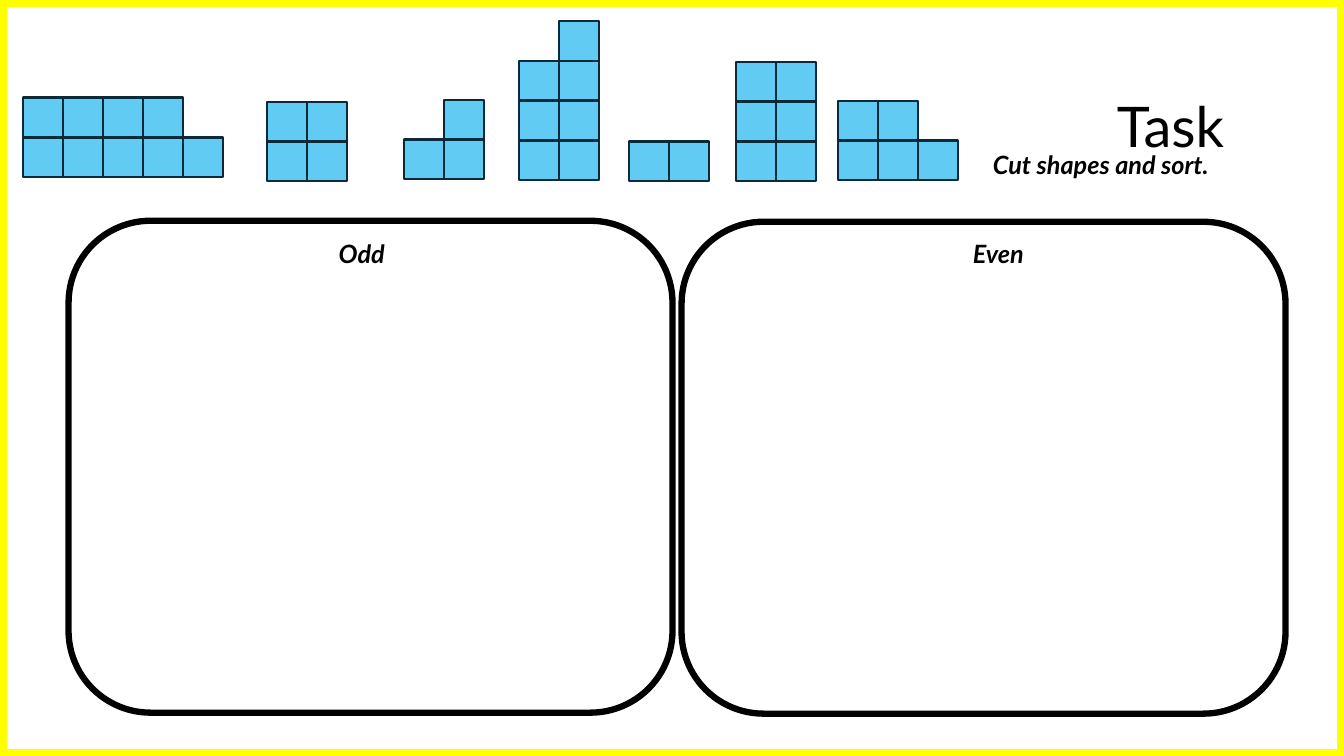
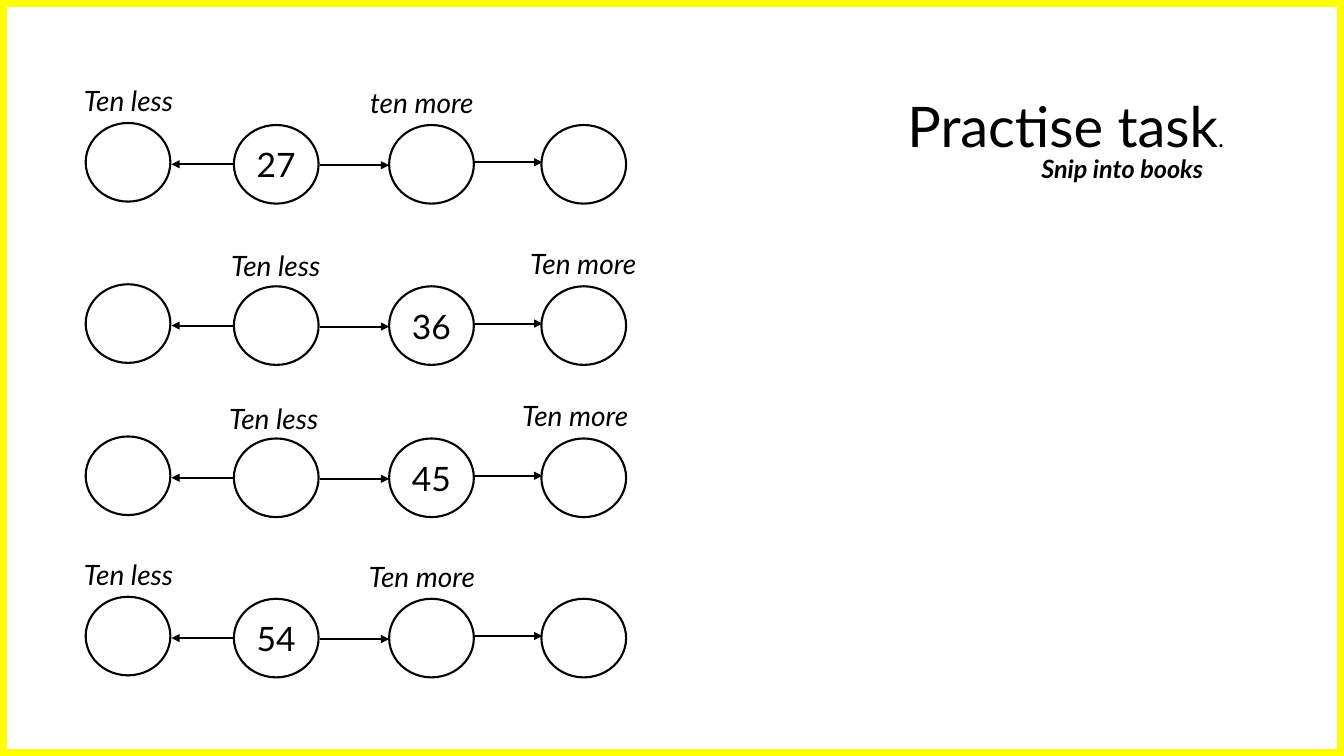
from dataclasses import dataclass

from lxml.etree import SubElement
from pptx import Presentation
from pptx.dml.color import RGBColor
from pptx.enum.shapes import MSO_CONNECTOR as Connector, MSO_SHAPE as Shape
from pptx.enum.text import MSO_ANCHOR as Anchor, MSO_AUTO_SIZE as AutoSize, PP_ALIGN as Align
from pptx.oxml.ns import qn
from pptx.util import Inches, Pt


@dataclass(frozen=True)
class Theme:
    """Colours, type sizes and line widths shared by the slides."""
    font: str = "Lato"
    ink: RGBColor = RGBColor(0x00, 0x00, 0x00)
    paper: RGBColor = RGBColor(0xFF, 0xFF, 0xFF)
    border: RGBColor = RGBColor(0xFF, 0xFF, 0x00)
    block: RGBColor = RGBColor(0x61, 0xCB, 0xF4)
    block_edge: RGBColor = RGBColor(0x09, 0x2A, 0x39)
    title_size: int = 40
    number_size: int = 24
    label_size: int = 20
    note_size: int = 18
    thin: float = 1.5
    frame: float = 4.5
    edge: float = 10


THEME = Theme()
SLIDE_WIDTH, SLIDE_HEIGHT = 13.33, 7.5

BLOCK_SIDE = 1.98 / 5
BLOCKS = [
    (0.23, 1.76, (2, 2, 2, 2, 1)),
    (2.65, 1.80, (2, 2)),
    (4.01, 1.78, (1, 2)),
    (5.15, 1.79, (3, 4)),
    (6.24, 1.80, (1, 1)),
    (7.30, 1.80, (3, 3)),
    (8.31, 1.79, (2, 2, 1)),
]

CIRCLE_WIDTH, CIRCLE_HEIGHT = 0.84, 0.78
CIRCLES = [(0.85, 0), (2.32, 0.02), (3.86, 0.02), (5.37, 0.02)]
ARROWS = [(2.32, 1.70, 0.41), (3.17, 3.86, 0.42), (4.69, 5.38, 0.39)]
CHAINS = [
    (1.22, 1, "27", [("Ten less", 0.54, 0.78), ("ten more", 3.45, 0.80)]),
    (2.82, 2, "36", [("Ten less", 2.00, 2.42), ("Ten more", 5.05, 2.40)]),
    (4.33, 2, "45", [("Ten less", 1.98, 3.93), ("Ten more", 4.97, 3.90)]),
    (5.92, 1, "54", [("Ten less", 0.54, 5.48), ("Ten more", 3.45, 5.50)]),
]


def add_run(paragraph, text, size, bold=False, italic=False):
    """Append one run in the theme font."""
    run = paragraph.add_run()
    run.text = text
    font = run.font
    font.name, font.size = THEME.font, Pt(size)
    font.bold, font.italic = bold, italic
    font.color.rgb = THEME.ink


def add_outline(shapes, kind, left, top, width, height, line, points, fill=None):
    """Add a shadowless outlined shape, filled when a colour is given."""
    shape = shapes.add_shape(kind, Inches(left), Inches(top), Inches(width), Inches(height))
    shape.shadow.inherit = False
    shape.line.color.rgb, shape.line.width = line, Pt(points)
    if fill is None:
        shape.fill.background()
    else:
        shape.fill.solid()
        shape.fill.fore_color.rgb = fill
    return shape


def add_text(slide, text, left, top, width, height, size, bold=False, wrap=False):
    """Add an italic text box; wrapped text is centred."""
    box = slide.shapes.add_textbox(Inches(left), Inches(top), Inches(width), Inches(height))
    frame = box.text_frame
    frame.word_wrap = wrap
    paragraph = frame.paragraphs[0]
    paragraph.alignment = Align.CENTER if wrap else Align.LEFT
    add_run(paragraph, text, size, bold, italic=True)


def add_note(slide, text, left, top, width):
    """Add a bold italic instruction or heading."""
    add_text(slide, text, left, top, width, 0.4, THEME.note_size, bold=True)


def add_page(presentation, *title_runs):
    """Add a slide with the yellow border and a right-aligned title."""
    slide = presentation.slides.add_slide(presentation.slide_layouts[5])
    add_outline(slide.shapes, Shape.RECTANGLE, 0, 0, SLIDE_WIDTH, SLIDE_HEIGHT,
                THEME.border, THEME.edge)
    title = slide.shapes.title
    title.left, title.top = Inches(8.24), Inches(0.86)
    title.width, title.height = Inches(4), Inches(0.77)
    frame = title.text_frame
    frame.auto_size, frame.vertical_anchor = AutoSize.NONE, Anchor.TOP
    paragraph = frame.paragraphs[0]
    paragraph.alignment = Align.RIGHT
    for text, size in title_runs:
        add_run(paragraph, text, size)
    return slide


def add_blocks(slide, left, bottom, heights):
    """Add a group of squares stacked to the given column heights."""
    group = slide.shapes.add_group_shape()
    for column, height in enumerate(heights):
        for level in range(1, height + 1):
            add_outline(group.shapes, Shape.RECTANGLE, left + column * BLOCK_SIDE,
                        bottom - level * BLOCK_SIDE, BLOCK_SIDE, BLOCK_SIDE,
                        THEME.block_edge, THEME.thin, THEME.block)


def add_arrow(slide, start, end, y):
    """Add a horizontal arrow pointing at its end."""
    arrow = slide.shapes.add_connector(Connector.STRAIGHT, Inches(start), Inches(y),
                                       Inches(end), Inches(y))
    arrow.line.color.rgb, arrow.line.width = THEME.ink, Pt(THEME.thin)
    SubElement(arrow.line._get_or_add_ln(), qn("a:tailEnd"), type="triangle")
    SubElement(arrow._element.spPr, qn("a:effectLst"))


def add_chain(slide, top, number_column, number, labels):
    """Add a row of linked circles with one number and its labels."""
    for start, end, drop in ARROWS:
        add_arrow(slide, start, end, top + drop)
    for column, (left, drop) in enumerate(CIRCLES):
        circle = add_outline(slide.shapes, Shape.OVAL, left, top + drop, CIRCLE_WIDTH,
                             CIRCLE_HEIGHT, THEME.ink, THEME.thin, THEME.paper)
        if column == number_column:
            circle.text_frame.vertical_anchor = Anchor.MIDDLE
            paragraph = circle.text_frame.paragraphs[0]
            paragraph.alignment = Align.CENTER
            add_run(paragraph, number, THEME.number_size)
    for text, left, label_top in labels:
        add_text(slide, text, left, label_top, 1.47, 0.44, THEME.label_size, wrap=True)


def build_sorting(presentation):
    """Build the odd and even sorting slide."""
    slide = add_page(presentation, ("Task", THEME.title_size))
    add_note(slide, "Cut shapes and sort.", 9.75, 1.43, 2.57)
    for heading, left, top, heading_left, heading_width in (
            ("Odd", 0.68, 2.19, 3.26, 0.69), ("Even", 6.76, 2.2, 9.55, 0.76)):
        add_outline(slide.shapes, Shape.ROUNDED_RECTANGLE, left, top, 5.99, 4.88,
                    THEME.ink, THEME.frame)
        add_note(slide, heading, heading_left, 2.32, heading_width)
    for left, bottom, heights in BLOCKS:
        add_blocks(slide, left, bottom, heights)


def build_practice(presentation):
    """Build the ten less and ten more slide."""
    slide = add_page(presentation, ("Practise task", THEME.title_size), (".", THEME.note_size))
    add_note(slide, "Snip into books", 10.23, 1.47, 1.96)
    for chain in CHAINS:
        add_chain(slide, *chain)


def main():
    """Build and save the presentation."""
    presentation = Presentation()
    presentation.slide_width = Inches(SLIDE_WIDTH)
    presentation.slide_height = Inches(SLIDE_HEIGHT)
    build_sorting(presentation)
    build_practice(presentation)
    presentation.save("out.pptx")


if __name__ == "__main__":
    main()
